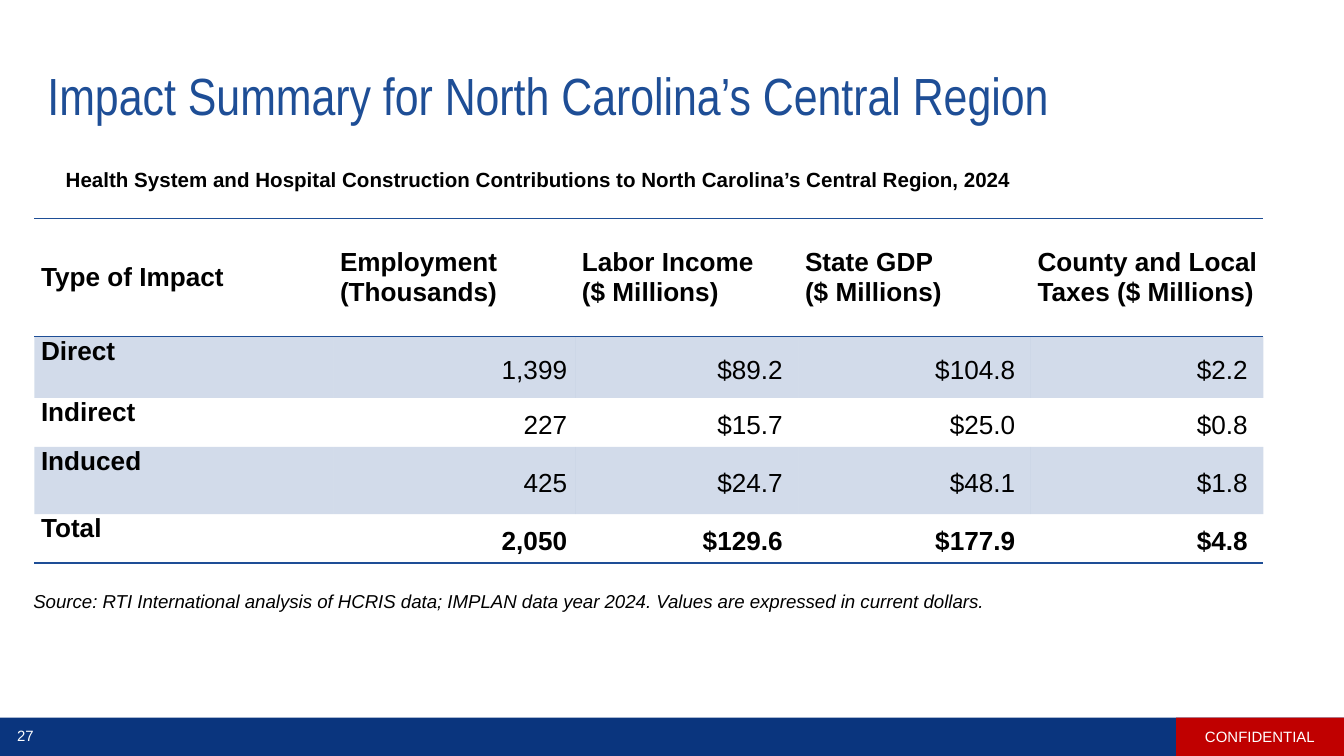
"""Build the impact summary slide for North Carolina's Central Region."""
from dataclasses import dataclass
from typing import Any, Optional

from lxml import etree
from pptx import Presentation
from pptx import util as u
from pptx.dml.color import RGBColor
from pptx.enum import shapes, text
from pptx.oxml.ns import qn

GRID = u.Inches(0.1)
SLIDE_COLUMNS, SLIDE_ROWS = 100, 56.25
BLUE, NAVY, RED, BLACK, WHITE = "1E4E96", "0A357E", "C00000", "000000", "FFFFFF"
MIDDLE, TOP = text.MSO_ANCHOR.MIDDLE, text.MSO_ANCHOR.TOP
LEFT, CENTER, RIGHT = text.PP_ALIGN.LEFT, text.PP_ALIGN.CENTER, text.PP_ALIGN.RIGHT


@dataclass(frozen=True)
class Box:
    """Place on the slide, in grid columns and rows."""
    column: float
    row: float
    columns: float
    rows: float

    def lengths(self) -> list[int]:
        """Return left, top, width and height."""
        return [units(n) for n in (self.column, self.row, self.columns, self.rows)]


@dataclass(frozen=True)
class ImpactRow:
    """One table row: its height in grid rows, label and values."""
    rows: float
    label: str
    values: tuple[str, ...]
    shaded: bool = False
    bold: bool = False


HEADER = ImpactRow(8.8, "Type of Impact", (
    "Employment (Thousands)", "Labor Income\v($ Millions)",
    "State GDP\v($ Millions)", "County and Local Taxes ($ Millions)"), bold=True)
BODY = (
    ImpactRow(4.55, "Direct", ("1,399", "$89.2", "$104.8", "$2.2"), shaded=True),
    ImpactRow(3.65, "Indirect", ("227", "$15.7", "$25.0", "$0.8")),
    ImpactRow(5.0, "Induced", ("425", "$24.7", "$48.1", "$1.8"), shaded=True),
    ImpactRow(3.65, "Total", ("2,050", "$129.6", "$177.9", "$4.8"), bold=True),
)
TABLE_COLUMNS = (22.25, 18.0, 16.6, 17.3, 17.3)
TABLE_BOX = Box(2.55, 16.25, sum(TABLE_COLUMNS), HEADER.rows + sum(r.rows for r in BODY))


def units(count: float) -> int:
    """Convert grid steps to a length."""
    return u.Emu(round(count * GRID))


def color(value: str) -> RGBColor:
    """Return the colour for a hex string."""
    return RGBColor.from_string(value)


def write(frame: Any, content: str, *, size: float, fill: str = BLACK, font: str = "Arial",
          bold: bool = False, italic: bool = False, align: Any = LEFT,
          spacing: Optional[float] = None) -> None:
    """Write one formatted paragraph into a text frame."""
    paragraph = frame.paragraphs[0]
    paragraph.text = content
    paragraph.alignment = align
    if spacing:
        paragraph.line_spacing = spacing
    for run in paragraph.runs:
        run.font.name, run.font.size = font, u.Pt(size)
        run.font.bold, run.font.italic = bold, italic
        run.font.color.rgb = color(fill)


def add_label(slide: Any, box: Box, content: str, anchor: Any = TOP,
              right_inset: float = 1, **style: Any) -> None:
    """Add a wrapping text box."""
    frame = slide.shapes.add_textbox(*box.lengths()).text_frame
    frame.word_wrap = True
    frame.vertical_anchor = anchor
    frame.margin_right = units(right_inset)
    write(frame, content, **style)


def add_bar(slide: Any, box: Box, fill: str) -> Any:
    """Add a plain filled rectangle."""
    shape = slide.shapes.add_shape(shapes.MSO_SHAPE.RECTANGLE, *box.lengths())
    shape.shadow.inherit = False
    shape.fill.solid()
    shape.fill.fore_color.rgb = color(fill)
    shape.line.fill.background()
    return shape


def set_borders(cell: Any, above: bool, below: bool) -> None:
    """Draw the chosen horizontal rules and hide the other cell borders."""
    properties = cell._tc.get_or_add_tcPr()
    sides = (("a:lnL", False), ("a:lnR", False), ("a:lnT", above), ("a:lnB", below))
    for index, (tag, visible) in enumerate(sides):
        line = etree.Element(qn(tag), w=str(u.Pt(1)))
        properties.insert(index, line)
        if visible:
            solid = etree.SubElement(line, qn("a:solidFill"))
            etree.SubElement(solid, qn("a:srgbClr"), val=BLUE)
        else:
            etree.SubElement(line, qn("a:noFill"))


def shade(cell: Any, shaded: bool) -> None:
    """Fill a cell with translucent blue or leave it clear."""
    if not shaded:
        cell.fill.background()
        return
    cell.fill.solid()
    cell.fill.fore_color.rgb = color(BLUE)
    tint = next(cell._tc.tcPr.find(qn("a:solidFill")).iter(qn("a:srgbClr")))
    etree.SubElement(tint, qn("a:alpha"), val="20000")


def fill_cell(cell: Any, row: ImpactRow, column: int, content: str) -> None:
    """Write a header, row label or value cell."""
    is_header, is_label = row is HEADER, column == 0
    is_value = not (is_header or is_label)
    cell.vertical_anchor = MIDDLE if is_header or is_value else TOP
    cell.margin_top = cell.margin_bottom = 0
    cell.margin_left = units(0.5)
    is_money = is_value and content.startswith("$")
    cell.margin_right = units(1.15 if is_money else 0.6 if is_value else 0.3)
    write(cell.text_frame, content, size=14, bold=row.bold or is_label,
          align=RIGHT if is_value else LEFT, spacing=1.2 if is_value else None)
    shade(cell, row.shaded)
    set_borders(cell, row in (HEADER, BODY[0]), row in (HEADER, BODY[-1]))


def add_impact_table(slide: Any) -> None:
    """Add the table of impacts by type."""
    impacts = (HEADER, *BODY)
    table = slide.shapes.add_table(len(impacts), len(TABLE_COLUMNS), *TABLE_BOX.lengths()).table
    table.first_row = table.horz_banding = False
    for column, width in zip(table.columns, TABLE_COLUMNS):
        column.width = units(width)
    for index, impact in enumerate(impacts):
        table.rows[index].height = units(impact.rows)
        for column, content in enumerate((impact.label, *impact.values)):
            fill_cell(table.cell(index, column), impact, column, content)


def main() -> None:
    """Build and save the presentation."""
    presentation = Presentation()
    presentation.slide_width, presentation.slide_height = units(SLIDE_COLUMNS), units(SLIDE_ROWS)
    slide = presentation.slides.add_slide(presentation.slide_layouts[6])
    add_bar(slide, Box(0, 53.4, SLIDE_COLUMNS, SLIDE_ROWS - 53.4), NAVY)
    add_label(slide, Box(2.55, 4.2, 96.7, 6.3),
              "Impact Summary for North Carolina’s Central Region",
              MIDDLE, 2, size=28, font="Arial Narrow", fill=BLUE, spacing=0.9)
    add_label(slide, Box(0, 53.55, 3.8, 2.4), "27", MIDDLE, size=8, fill=WHITE, align=CENTER)
    badge = add_bar(slide, Box(87.5, 53.4, 12.5, SLIDE_ROWS - 53.4), RED)
    badge.text_frame.vertical_anchor = MIDDLE
    write(badge.text_frame, "CONFIDENTIAL", size=8, fill=WHITE, align=CENTER)
    add_impact_table(slide)
    add_label(slide, Box(3.9, 11.9, 96.1, 2.9),
              "Health System and Hospital Construction Contributions to "
              "North Carolina’s Central Region, 2024", size=11, bold=True)
    add_label(slide, Box(1.5, 43.4, 95.6, 2.7),
              "Source: RTI International analysis of HCRIS data; IMPLAN data year 2024. "
              "Values are expressed in current dollars.", size=10, italic=True)
    presentation.save("out.pptx")


if __name__ == "__main__":
    main()
